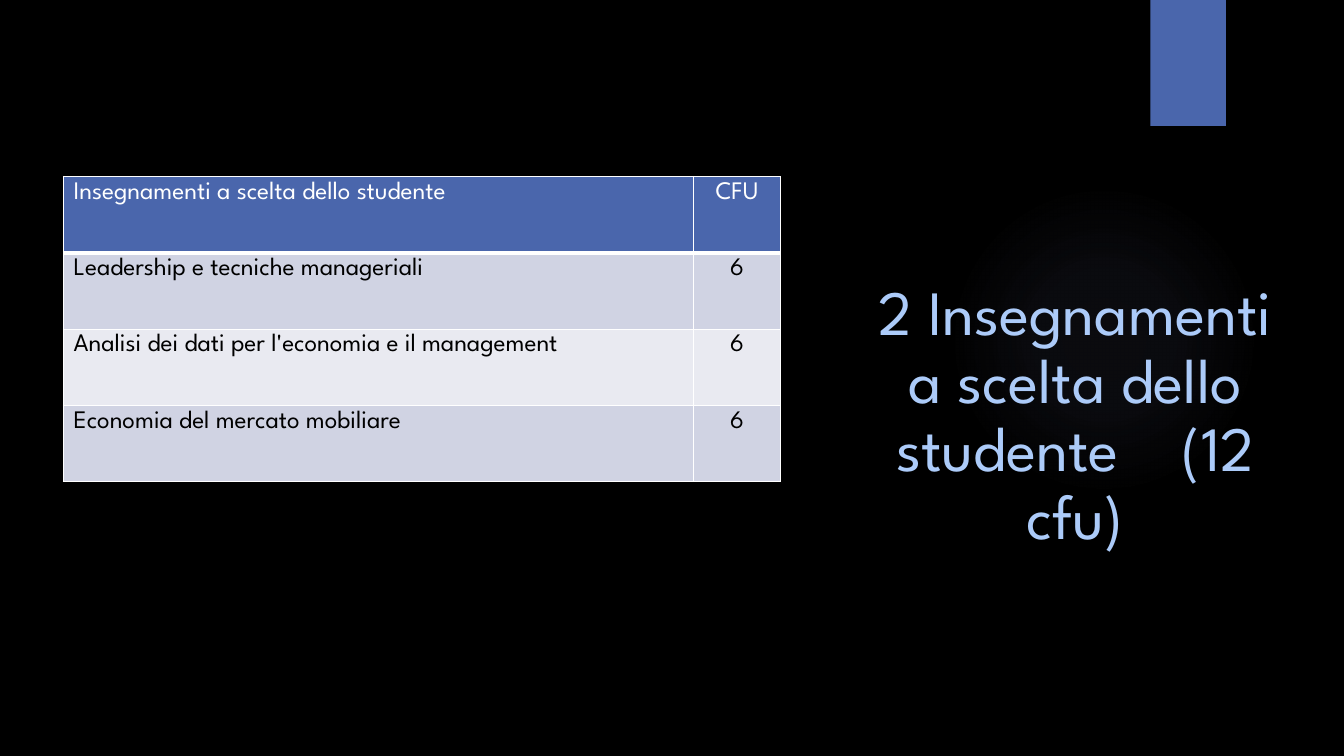
from pptx import Presentation
from pptx.dml.color import RGBColor
from pptx.enum.shapes import MSO_SHAPE
from pptx.enum.text import MSO_ANCHOR, PP_ALIGN
from pptx.oxml import parse_xml
from pptx.oxml.ns import nsdecls
from pptx.util import Inches, Pt

FONT = "League Spartan"
BLACK = RGBColor(0x00, 0x00, 0x00)
WHITE = RGBColor(0xFF, 0xFF, 0xFF)
BLUE = RGBColor(0x4A, 0x66, 0xAC)
LIGHT_BLUE = RGBColor(0xAC, 0xCB, 0xF9)
GLOW = RGBColor(0x92, 0x97, 0xCF)
BAND_DARK = RGBColor(0xD0, 0xD3, 0xE3)
BAND_LIGHT = RGBColor(0xE9, 0xEA, 0xF1)


def style_run(run, size, color):
    run.font.name = FONT
    run.font.size = Pt(size)
    run.font.color.rgb = color


def add_border(cell, position, side, width):
    """Insert a white border line; position keeps the order the schema asks for."""
    cell._tc.get_or_add_tcPr().insert(position, parse_xml(
        f'<a:ln{side} {nsdecls("a")} w="{Pt(width)}"><a:solidFill>'
        f'<a:srgbClr val="{WHITE}"/></a:solidFill></a:ln{side}>'))


presentation = Presentation()
presentation.slide_width = Inches(13.33)
presentation.slide_height = Inches(7.5)
slide = presentation.slides.add_slide(presentation.slide_layouts[6])
slide.background.fill.solid()
slide.background.fill.fore_color.rgb = BLACK

# Soft glow behind the title
glow = slide.shapes.add_shape(
    MSO_SHAPE.OVAL, Inches(9.41), Inches(1.83), Inches(3.08), Inches(3.08))
glow.shadow.inherit = False
glow.line.fill.background()
stops = "".join(
    f'<a:gs pos="{position * 1000}"><a:srgbClr val="{GLOW}">'
    f'<a:alpha val="{opacity * 1000}"/></a:srgbClr></a:gs>'
    for position, opacity in [(0, 7), (36, 6), (69, 0)])
glow._element.spPr.insert(2, parse_xml(
    f'<a:gradFill {nsdecls("a")}><a:gsLst>{stops}</a:gsLst><a:path path="circle">'
    '<a:fillToRect l="50000" t="50000" r="50000" b="50000"/></a:path></a:gradFill>'))

# Ribbon at the top edge
ribbon = slide.shapes.add_shape(
    MSO_SHAPE.RECTANGLE, Inches(11.41), 0, Inches(0.75), Inches(1.25))
ribbon.shadow.inherit = False
ribbon.fill.solid()
ribbon.fill.fore_color.rgb = BLUE
ribbon.line.fill.background()

# Title, with one widened space before the credits
title = slide.shapes.add_textbox(Inches(8.43), Inches(1.11), Inches(4.47), Inches(4.43))
title.text_frame.word_wrap = True
title.text_frame.vertical_anchor = MSO_ANCHOR.BOTTOM
paragraph = title.text_frame.paragraphs[0]
paragraph.alignment = PP_ALIGN.CENTER
paragraph.line_spacing = 0.9
for text, letter_spacing in [
        ("2 Insegnamenti a scelta dello studente", 0), (" ", 34), ("(12 cfu)", 0)]:
    run = paragraph.add_run()
    run.text = text
    style_run(run, 45, LIGHT_BLUE)
    if letter_spacing:
        run._r.get_or_add_rPr().set("spc", str(letter_spacing * 100))

# Course table
courses = [
    ("Insegnamenti a scelta dello studente", "CFU"),
    ("Leadership e tecniche manageriali", "6"),
    ("Analisi dei dati per l'economia e il management", "6"),
    ("Economia del mercato mobiliare", "6"),
]
row_fills = [BLUE, BAND_DARK, BAND_LIGHT, BAND_DARK]
table = slide.shapes.add_table(
    len(courses), 2, Inches(0.63), Inches(1.75), Inches(7.11), Inches(3.03)).table
table.columns[0].width = Inches(6.25)
table.columns[1].width = Inches(0.86)

for row_index, (course, row_fill) in enumerate(zip(courses, row_fills)):
    is_header = row_index == 0
    for column_index, text in enumerate(course):
        cell = table.cell(row_index, column_index)
        cell.fill.solid()
        cell.fill.fore_color.rgb = row_fill
        for position, side in enumerate("LRTB"):
            add_border(cell, position, side, 3 if is_header and side == "B" else 1)
        paragraph = cell.text_frame.paragraphs[0]
        paragraph.text = text
        paragraph.alignment = PP_ALIGN.CENTER if column_index else PP_ALIGN.LEFT
        style_run(paragraph.runs[0], 18, WHITE if is_header else BLACK)
        paragraph.runs[0].font.bold = False

presentation.save("out.pptx")
